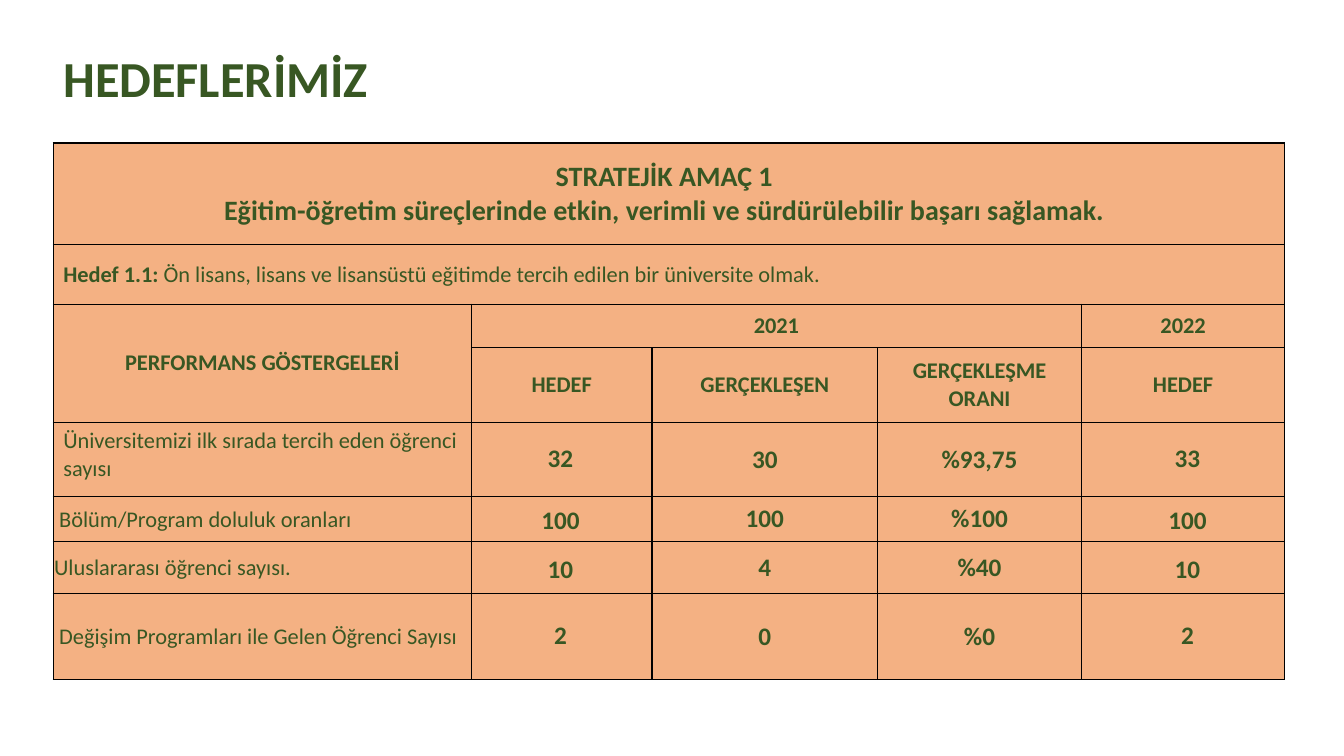
import pptx
import pptx.dml.color
import pptx.enum.text
import pptx.oxml
import pptx.oxml.ns
import pptx.util

Pt = pptx.util.Pt
ALIGN = pptx.enum.text.PP_ALIGN
MIDDLE = pptx.enum.text.MSO_ANCHOR.MIDDLE
TOP = pptx.enum.text.MSO_ANCHOR.TOP
AUTO_SIZE = pptx.enum.text.MSO_AUTO_SIZE

COLORS = {"text": "385723", "cell": "F4B183", "border": "000000"}
COLUMN_WIDTHS = [298.8, 128.9, 161.3, 145.4, 145.4]
ROW_HEIGHTS = [72.7, 42.5, 31, 53.3, 53.3, 31.7, 37.4, 61.2]
TABLE_LEFT, TABLE_TOP = 38, 102.2

# Indicator, its left inset, achieved value, rate
INDICATORS = [
    ("Üniversitemizi ilk sırada tercih eden öğrenci sayısı", 7.2, "30", "%93,75"),
    ("Bölüm/Program doluluk oranları", 4.3, "100", "%100"),
    ("Uluslararası öğrenci sayısı.", 0.7, "4", "%40"),
    ("Değişim Programları ile Gelen Öğrenci Sayısı", 4.3, "0", "%0"),
]
# Target 2021, target 2022, top, width
TARGETS = [
    ("32", "33", 312.5, 33),
    ("100", "100", 356.4, 46),
    ("10", "10", 391.7, 36),
    ("2", "2", 438.5, 24),
]
TARGET_CENTERS = [400.3, 848.2]


def set_values(target, values):
    for name, value in values.items():
        setattr(target, name, value)


def write_text(text_frame, paragraphs, size, align=ALIGN.CENTER):
    """Each paragraph is a list of (text, bold) runs."""
    for index, runs in enumerate(paragraphs):
        paragraph = text_frame.add_paragraph() if index else text_frame.paragraphs[0]
        paragraph.alignment = align
        for text, bold in runs:
            run = paragraph.add_run()
            run.text = text
            set_values(run.font, {"name": "Calibri", "size": Pt(size), "bold": bold})
            run.font.color.rgb = pptx.dml.color.RGBColor.from_string(COLORS["text"])


def format_cell(cell):
    properties = cell._tc.get_or_add_tcPr()
    for side in ("lnL", "lnR", "lnT", "lnB"):
        properties.append(pptx.oxml.parse_xml(
            f'<a:{side} {pptx.oxml.ns.nsdecls("a")} w="{Pt(1)}"><a:solidFill>'
            f'<a:srgbClr val="{COLORS["border"]}"/></a:solidFill></a:{side}>'))
    cell.fill.solid()
    cell.fill.fore_color.rgb = pptx.dml.color.RGBColor.from_string(COLORS["cell"])


def fill_cell(cell, paragraphs, size=16, align=ALIGN.CENTER, anchor=MIDDLE, insets=None):
    write_text(cell.text_frame, paragraphs, size, align)
    cell.vertical_anchor = anchor
    for side, inset in (insets or {}).items():
        setattr(cell, f"margin_{side}", Pt(inset))


def add_title(slide, text):
    title = slide.shapes.title
    set_values(title, {"left": Pt(38), "top": Pt(23), "width": Pt(828), "height": Pt(70.6)})
    set_values(title.text_frame, {"vertical_anchor": MIDDLE, "auto_size": AUTO_SIZE.NONE})
    write_text(title.text_frame, [[(text, True)]], 36, ALIGN.LEFT)
    title.text_frame.paragraphs[0].line_spacing = 0.9


def add_goal_table(slide):
    table = slide.shapes.add_table(
        len(ROW_HEIGHTS), len(COLUMN_WIDTHS), Pt(TABLE_LEFT), Pt(TABLE_TOP),
        Pt(sum(COLUMN_WIDTHS)), Pt(sum(ROW_HEIGHTS))).table
    set_values(table, {"first_row": False, "horz_banding": False})
    for column, width in zip(table.columns, COLUMN_WIDTHS):
        column.width = Pt(width)
    for row, height in zip(table.rows, ROW_HEIGHTS):
        row.height = Pt(height)
    for cell in table.iter_cells():
        format_cell(cell)
    for first, last in (((0, 0), (0, 4)), ((1, 0), (1, 4)), ((2, 0), (3, 0)), ((2, 1), (2, 3))):
        table.cell(*first).merge(table.cell(*last))

    # Aim and goal
    fill_cell(table.cell(0, 0), [
        [("STRATEJİK AMAÇ 1", True)],
        [("Eğitim-öğretim süreçlerinde etkin, verimli ve sürdürülebilir başarı sağlamak.", True)],
    ], size=20, insets={"right": 14})
    fill_cell(table.cell(1, 0), [[
        ("Hedef 1.1: ", True),
        ("Ön lisans, lisans ve lisansüstü eğitimde tercih edilen bir üniversite olmak.", False),
    ]], align=ALIGN.LEFT)

    # Column headings
    headings = {
        (2, 0): "PERFORMANS GÖSTERGELERİ", (2, 1): "2021", (2, 4): "2022",
        (3, 1): "HEDEF", (3, 2): "GERÇEKLEŞEN", (3, 3): "GERÇEKLEŞME ORANI", (3, 4): "HEDEF",
    }
    for position, heading in headings.items():
        fill_cell(table.cell(*position), [[(heading, True)]])

    # Indicators with achieved values and rates
    tight = dict.fromkeys(("left", "top", "right", "bottom"), 2.2)
    for row, (indicator, inset, achieved, rate) in enumerate(INDICATORS, start=4):
        first = row == 4
        insets = {"left": inset} if first else {
            "left": inset, "top": 0.7, "right": 0.7, "bottom": 0}
        fill_cell(table.cell(row, 0), [[(indicator, False)]], align=ALIGN.LEFT,
                  anchor=TOP if first else MIDDLE, insets=insets)
        for column, value in ((2, achieved), (3, rate)):
            fill_cell(table.cell(row, column), [[(value, True)]], size=18, insets=tight)


def add_target(slide, text, center, top, width):
    box = slide.shapes.add_textbox(Pt(center - width / 2), Pt(top), Pt(width), Pt(29))
    set_values(box.text_frame, {"word_wrap": False, "auto_size": AUTO_SIZE.SHAPE_TO_FIT_TEXT})
    write_text(box.text_frame, [[(text, True)]], 18)


def main():
    presentation = pptx.Presentation()
    set_values(presentation, {"slide_width": Pt(960), "slide_height": Pt(540)})
    slide = presentation.slides.add_slide(presentation.slide_layouts[5])
    add_title(slide, "HEDEFLERİMİZ")
    add_goal_table(slide)

    # Target values over the two HEDEF columns
    for *values, top, width in TARGETS:
        for text, center in zip(values, TARGET_CENTERS):
            add_target(slide, text, center, top, width)

    presentation.save("out.pptx")


if __name__ == "__main__":
    main()
